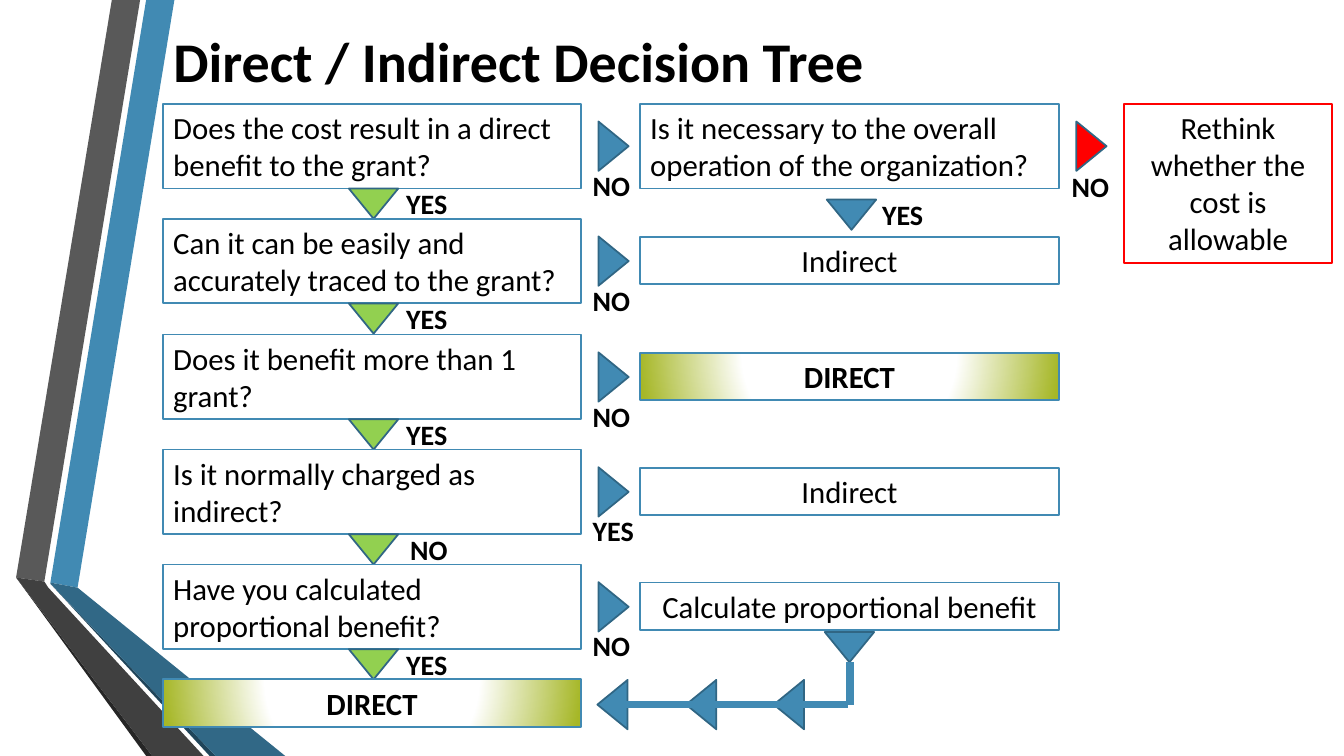
from dataclasses import dataclass

from pptx import Presentation
from pptx.dml.color import RGBColor
from pptx.enum.shapes import MSO_CONNECTOR as Connector, MSO_SHAPE as Preset
from pptx.enum.text import MSO_ANCHOR as Anchor, MSO_AUTO_SIZE as AutoSize, PP_ALIGN as Align
from pptx.oxml import parse_xml
from pptx.oxml.ns import nsdecls
from pptx.util import Pt

SCALE = 9144
BLUE, BLUE_EDGE, GREEN, RED = "418AB3", "306684", "92D050", "FF0000"
WHITE, BLACK, OLIVE = "FFFFFF", "000000", "A6B727"
QUESTION_LEFT, QUESTION_WIDTH = 162, 414
OUTCOME_LEFT, OUTCOME_WIDTH = 635, 415
QUESTION_HEIGHT, OUTCOME_HEIGHT = 84, 47
DOWN, RIGHT, LEFT = 180, 90, 270


@dataclass
class Step:
    question: str
    down_answer: str
    side_answer: str
    outcome: str


@dataclass
class Ribbon:
    color: str
    points: list[tuple[int, int]]


STEPS = [
    Step("Does the cost result in a direct benefit to the grant?", "YES", "NO",
         "Is it necessary to the overall operation of the organization?"),
    Step("Can it can be easily and accurately traced to the grant?", "YES", "NO", "Indirect"),
    Step("Does it benefit more than 1 grant?", "YES", "NO", "DIRECT"),
    Step("Is it normally charged as indirect?", "NO", "YES", "Indirect"),
    Step("Have you calculated proportional benefit?", "YES", "NO", "Calculate proportional benefit"),
]

RIBBONS = [
    Ribbon(BLUE, [(50, 578), (77, 583), (173, 0), (145, 0)]),
    Ribbon("595959", [(139, 0), (111, 0), (16, 573), (44, 577)]),
    Ribbon("262626", [(16, 573), (145, 750), (151, 750)]),
    Ribbon("20455A", [(50, 579), (208, 750), (214, 750)]),
    Ribbon("316886", [(50, 579), (214, 750), (283, 750), (77, 583), (50, 578)]),
    Ribbon("404040", [(202, 750), (48, 583), (44, 577), (16, 573), (151, 750)]),
]


def px(length: int) -> int:
    return length * SCALE


def rgb(color: str) -> RGBColor:
    return RGBColor.from_string(color)


def paint(shape, fill: str, edge: str | None) -> None:
    shape.shadow.inherit = False
    shape.fill.solid()
    shape.fill.fore_color.rgb = rgb(fill)
    if edge is None:
        shape.line.fill.background()
    else:
        shape.line.color.rgb = rgb(edge)
        shape.line.width = Pt(1.25)


def paint_glow(shape) -> None:
    shape.fill.gradient()
    gradient = shape.element.spPr.find(".//{*}gradFill")
    stops = "".join(
        f'<a:gs pos="{position}"><a:srgbClr val="{color}"/></a:gs>'
        for position, color in [(0, WHITE), (51000, WHITE), (100000, OLIVE)]
    )
    gradient.getparent().replace(gradient, parse_xml(
        f'<a:gradFill {nsdecls("a")} rotWithShape="1"><a:gsLst>{stops}</a:gsLst>'
        '<a:path path="circle"><a:fillToRect l="50000" t="-80000" r="50000" b="180000"/>'
        '</a:path></a:gradFill>'
    ))


def write(shape, text: str, size: int, bold: bool, align: Align, anchor: Anchor) -> None:
    frame = shape.text_frame
    frame.word_wrap = True
    frame.vertical_anchor = anchor
    para = frame.paragraphs[0]
    para.text = text
    para.alignment = align
    para.font.name = "Calibri"
    para.font.size = Pt(size)
    para.font.bold = bold
    para.font.color.rgb = rgb(BLACK)


def add_ribbon(page, ribbon: Ribbon) -> None:
    builder = page.shapes.build_freeform(*ribbon.points[0], scale=SCALE)
    builder.add_line_segments(ribbon.points[1:], close=True)
    paint(builder.convert_to_shape(), ribbon.color, None)


def add_box(page, left: int, top: int, width: int, height: int, text: str,
            align: Align = Align.CENTER, edge: str = BLUE) -> None:
    box = page.shapes.add_shape(Preset.RECTANGLE, px(left), px(top), px(width), px(height))
    paint(box, WHITE, edge)
    final = text == "DIRECT"
    if final:
        paint_glow(box)
    write(box, text, 22, final, align, Anchor.TOP)
    box.text_frame.auto_size = AutoSize.SHAPE_TO_FIT_TEXT


def add_arrow(page, left: int, top: int, angle: int, fill: str = BLUE) -> None:
    arrow = page.shapes.add_shape(Preset.ISOSCELES_TRIANGLE, px(left), px(top), px(49), px(30))
    arrow.rotation = angle
    paint(arrow, fill, BLUE_EDGE)


def add_answer(page, left: int, top: int, text: str) -> None:
    label = page.shapes.add_textbox(px(left), px(top), px(74), px(44))
    write(label, text, 20, True, Align.LEFT, Anchor.TOP)
    label.text_frame.auto_size = AutoSize.SHAPE_TO_FIT_TEXT


def add_line(page, start: tuple[int, int], end: tuple[int, int]) -> None:
    line = page.shapes.add_connector(Connector.STRAIGHT, *map(px, start + end))
    line.line.color.rgb = rgb(BLUE)
    line.line.width = Pt(5.5)
    line.element.spPr.append(parse_xml(f'<a:effectLst {nsdecls("a")}/>'))


def add_step(page, index: int, step: Step) -> None:
    top = round(103.1 + 114.3 * index)
    add_box(page, QUESTION_LEFT, top, QUESTION_WIDTH, QUESTION_HEIGHT, step.question, Align.LEFT)
    if index == 0:
        add_box(page, OUTCOME_LEFT, top, OUTCOME_WIDTH, QUESTION_HEIGHT, step.outcome, Align.LEFT)
    else:
        add_box(page, OUTCOME_LEFT, top + 18, OUTCOME_WIDTH, OUTCOME_HEIGHT, step.outcome)
    add_arrow(page, 346, top + QUESTION_HEIGHT, DOWN, GREEN)
    add_arrow(page, 584, top + 27, RIGHT)
    add_answer(page, 393 if step.down_answer == "YES" else 397, top + 77, step.down_answer)
    add_answer(page, 578, top + 59, step.side_answer)


def main() -> None:
    deck = Presentation()
    deck.slide_width, deck.slide_height = px(1333), px(750)
    page = deck.slides.add_slide(deck.slide_layouts[5])

    title = page.shapes.title
    title.left, title.top, title.width, title.height = map(px, (162, 16, 1096, 87))
    write(title, "Direct / Indirect Decision Tree", 40, True, Align.LEFT, Anchor.MIDDLE)

    for ribbon in RIBBONS:
        add_ribbon(page, ribbon)
    for index, step in enumerate(STEPS):
        add_step(page, index, step)

    add_box(page, 1115, 103, 206, 158, "Rethink whether the cost is allowable", edge=RED)
    add_arrow(page, 1058, 130, RIGHT, RED)
    add_answer(page, 1053, 163, "NO")
    add_arrow(page, 820, 198, DOWN)
    add_answer(page, 865, 191, "YES")

    add_box(page, QUESTION_LEFT, 674, QUESTION_WIDTH, OUTCOME_HEIGHT, "DIRECT")
    for left in (583, 671, 758):
        add_arrow(page, left, 684, LEFT)
    add_arrow(page, 818, 627, DOWN)
    add_line(page, (621, 699), (841, 699))
    add_line(page, (843, 657), (843, 699))

    deck.save("out.pptx")


if __name__ == "__main__":
    main()
